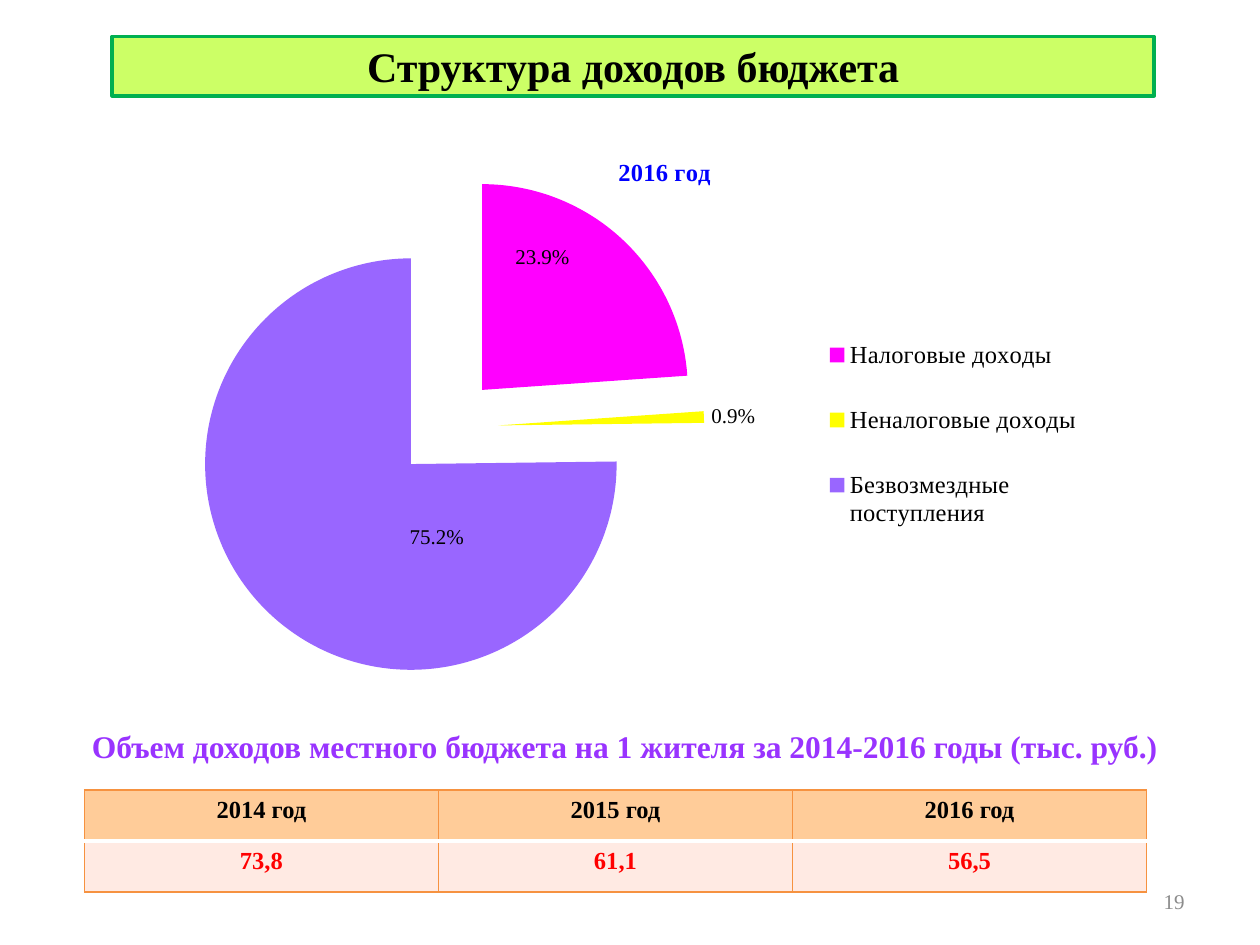
import pptx
import pptx.chart.data
import pptx.dml.color
import pptx.enum.chart
import pptx.enum.text
import pptx.oxml
import pptx.oxml.ns
import pptx.util

THEME = {
    "font": "Times New Roman",
    "title": 24, "heading": 18, "body": 14, "small": 12,
    "black": "000000", "red": "FF0000", "blue": "0000FF", "violet": "9933FF",
    "grey": "8C8C8C", "lime": "CCFF66", "green": "00B050",
    "header": "FFCC99", "cell": "FFEAE3", "border": "F69240", "rule": "FFFFFF",
    "slices": ["FF00FF", "FFFF00", "9966FF"],
}
NAMESPACES = pptx.oxml.ns.nsdecls("a", "c")
RGB = pptx.dml.color.RGBColor.from_string
ALIGN = pptx.enum.text.PP_ALIGN
ANCHOR = pptx.enum.text.MSO_ANCHOR

presentation = pptx.Presentation()
presentation.slide_width = pptx.util.Inches(10)
presentation.slide_height = pptx.util.Inches(7.5)
slide = presentation.slides.add_slide(presentation.slide_layouts[5])


def frame(left, top, width, height):
    """Turn percentages of the slide's size into lengths."""
    across = presentation.slide_width / 100
    down = presentation.slide_height / 100
    return [round(left * across), round(top * down), round(width * across), round(height * down)]


def write(text_frame, text, size, color, bold=True, align=ALIGN.CENTER):
    paragraph = text_frame.paragraphs[0]
    paragraph.alignment = align
    run = paragraph.add_run()
    run.text = text
    run.font.name = THEME["font"]
    run.font.size = pptx.util.Pt(THEME[size])
    run.font.bold = bold
    run.font.color.rgb = RGB(THEME[color])


# Title in a rounded frame
title = slide.shapes.title
title.left, title.top, title.width, title.height = frame(8.9, 3.87, 82.7, 6.27)
title._element.spPr.append(pptx.oxml.parse_xml(
    f'<a:prstGeom {NAMESPACES} prst="roundRect"><a:avLst/></a:prstGeom>'))
title.fill.solid()
title.fill.fore_color.rgb = RGB(THEME["lime"])
title.line.color.rgb = RGB(THEME["green"])
title.line.width = pptx.util.Pt(2)
title.text_frame.auto_size = pptx.enum.text.MSO_AUTO_SIZE.NONE
title.text_frame.vertical_anchor = ANCHOR.MIDDLE
write(title.text_frame, "Структура доходов бюджета", "title", "black")

# Pie of income shares
chart_data = pptx.chart.data.CategoryChartData(number_format="0.0%")
chart_data.categories = ["Налоговые доходы ", "Неналоговые доходы", "Безвозмездные поступления"]
chart_data.add_series("Series 1", [0.239, 0.009, 0.752])
chart = slide.shapes.add_chart(
    pptx.enum.chart.XL_CHART_TYPE.PIE, *frame(11.3, 14, 78, 67.2), chart_data).chart
chart.font.name = THEME["font"]
chart.font.size = pptx.util.Pt(THEME["heading"])
chart.font.color.rgb = RGB(THEME["black"])
chart.has_title = True
write(chart.chart_title.text_frame, "2016 год", "body", "blue")
chart.has_legend = True
chart.legend.position = pptx.enum.chart.XL_LEGEND_POSITION.RIGHT
chart.legend.include_in_layout = False
chart.legend.font.name = THEME["font"]
chart.legend.font.size = pptx.util.Pt(THEME["body"])

plot = chart.plots[0]
plot.vary_by_categories = True
series = plot.series[0]
series._element.find(pptx.oxml.ns.qn("c:tx")).addnext(
    pptx.oxml.parse_xml(f'<c:explosion {NAMESPACES} val="25"/>'))
POSITION = pptx.enum.chart.XL_LABEL_POSITION
label_positions = [POSITION.CENTER, POSITION.OUTSIDE_END, POSITION.CENTER]
for index, color in enumerate(THEME["slices"]):
    point = series.points[index]
    point.format.fill.solid()
    point.format.fill.fore_color.rgb = RGB(color)
    point.data_label.font.name = THEME["font"]
    point.data_label.font.size = pptx.util.Pt(THEME["small"])
    point.data_label.position = label_positions[index]
series.data_labels.show_value = True
series.data_labels.number_format = "0.0%"
series.data_labels.number_format_is_linked = False
series.data_labels.font.name = THEME["font"]
series.data_labels.font.size = pptx.util.Pt(THEME["small"])

# Manual places inside the chart, as shares of its size; labels are offsets
edge = {"xMode": "edge", "yMode": "edge"}
label_indexes = series._element.xpath("c:dLbls/c:dLbl/c:idx")
layouts = [
    (chart.chart_title._element.find(pptx.oxml.ns.qn("c:tx")), {**edge, "x": 0.48, "y": 0.03}),
    (chart.legend._element.find(pptx.oxml.ns.qn("c:legendPos")),
     {**edge, "x": 0.69, "y": 0.27, "w": 0.27, "h": 0.41}),
    (None, {"layoutTarget": "inner", **edge, "x": 0, "y": 0.06, "w": 0.62, "h": 0.81}),
    (label_indexes[0], {"x": -0.01, "y": -0.09}),
    (label_indexes[2], {"x": 0.1, "y": 0}),
]
for anchor, values in layouts:
    parent = chart._chartSpace.chart.plotArea if anchor is None else anchor.getparent()
    for old_layout in parent.findall(pptx.oxml.ns.qn("c:layout")):
        parent.remove(old_layout)
    entries = "".join(f'<c:{name} val="{value}"/>' for name, value in values.items())
    layout = pptx.oxml.parse_xml(
        f"<c:layout {NAMESPACES}><c:manualLayout>{entries}</c:manualLayout></c:layout>")
    if anchor is None:
        parent.insert(0, layout)
    else:
        anchor.addnext(layout)

# Heading of the table
heading = slide.shapes.add_textbox(*frame(5.9, 76.27, 87.4, 5.33))
heading.text_frame.word_wrap = True
write(heading.text_frame, "Объем доходов местного бюджета на 1 жителя за 2014-2016 годы (тыс. руб.)",
      "heading", "violet")

# Income per resident
rows = [
    (["2014 год", "2015 год", "2016 год"], "black", "header"),
    (["73,8", "61,1", "56,5"], "red", "cell"),
]
table = slide.shapes.add_table(2, 3, *frame(6.7, 83.6, 84.3, 10.8)).table
for row_index, (texts, text_color, fill_color) in enumerate(rows):
    for column_index, text in enumerate(texts):
        cell = table.cell(row_index, column_index)
        write(cell.text_frame, text, "body", text_color)
        borders = {side: ("border", 0.75) for side in ("lnL", "lnR", "lnT", "lnB")}
        borders["lnT" if row_index else "lnB"] = ("rule", 2)
        for side, (color, width) in borders.items():
            cell._tc.get_or_add_tcPr().append(pptx.oxml.parse_xml(
                f'<a:{side} {NAMESPACES} w="{pptx.util.Pt(width)}"><a:solidFill>'
                f'<a:srgbClr val="{THEME[color]}"/></a:solidFill></a:{side}>'))
        cell.fill.solid()
        cell.fill.fore_color.rgb = RGB(THEME[fill_color])

# Page number
page_number = slide.shapes.add_textbox(*frame(71.7, 92.67, 23.3, 5.33))
page_number.text_frame.word_wrap = True
page_number.text_frame.vertical_anchor = ANCHOR.MIDDLE
write(page_number.text_frame, "19", "small", "grey", bold=False, align=ALIGN.RIGHT)

presentation.save("out.pptx")
